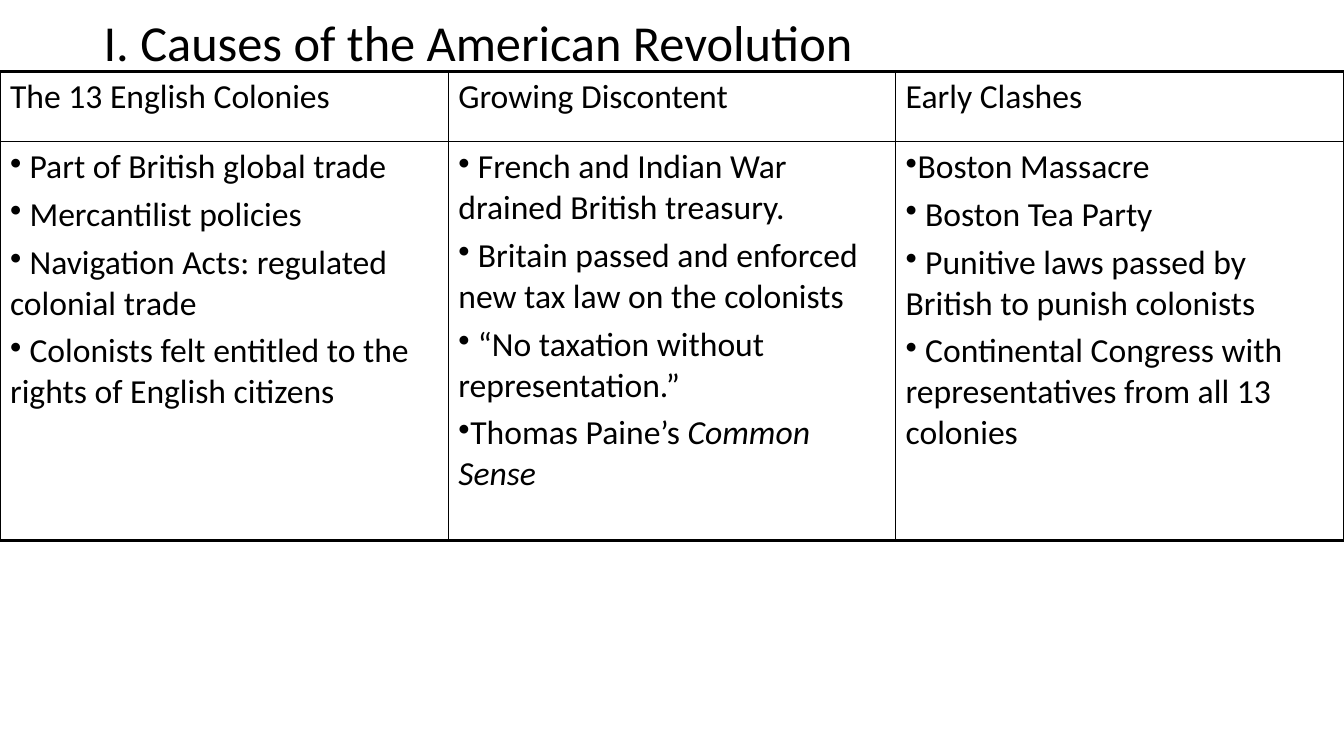
from dataclasses import dataclass

import lxml.etree
import pptx
import pptx.dml.color
import pptx.enum.text
import pptx.oxml.ns
import pptx.util

PX = 9525  # EMU in one px, 96 px to the inch
COLORS = {"ink": "000000", "paper": "FFFFFF"}
TITLE_FONT = {"name": "Calibri", "size": pptx.util.Pt(36), "bold": False}
CELL_FONT = {"name": "Calibri", "size": pptx.util.Pt(24), "bold": False}
THIN, THICK = 1, 2.25  # border widths in points
SLIDE_WIDTH, SLIDE_HEIGHT = 1280, 720
TABLE_TOP = 68
COLUMN_WIDTHS = (427, 426, 427)
ROW_HEIGHTS = (67, 380)


@dataclass
class Point:
    text: str
    book_title: str = ""


@dataclass
class Topic:
    heading: str
    points: list[Point]


TOPICS = [
    Topic("The 13 English Colonies", [
        Point(" Part of British global trade"),
        Point(" Mercantilist policies"),
        Point(" Navigation Acts: regulated colonial trade"),
        Point(" Colonists felt entitled to the rights of English citizens"),
    ]),
    Topic("Growing Discontent", [
        Point(" French and Indian War drained British treasury."),
        Point(" Britain passed and enforced new tax law on the colonists"),
        Point(" “No taxation without representation.”"),
        Point("Thomas Paine’s ", "Common Sense"),
    ]),
    Topic("Early Clashes", [
        Point("Boston Massacre"),
        Point(" Boston Tea Party"),
        Point(" Punitive laws passed by British to punish colonists"),
        Point(" Continental Congress with representatives from all 13 colonies"),
    ]),
]


def px(length: int) -> pptx.util.Emu:
    return pptx.util.Emu(length * PX)


def rgb(color: str) -> pptx.dml.color.RGBColor:
    return pptx.dml.color.RGBColor.from_string(COLORS[color])


def add_element(parent, tag: str, **attributes: str):
    return lxml.etree.SubElement(parent, pptx.oxml.ns.qn(tag), attributes)


def add_text(paragraph, text: str, formats: dict, italic: bool = False) -> None:
    run = paragraph.add_run()
    run.text = text
    for name, value in {**formats, "italic": italic}.items():
        setattr(run.font, name, value)
    run.font.color.rgb = rgb("ink")


def add_points(frame, points: list[Point]) -> None:
    for index, point in enumerate(points):
        paragraph = frame.add_paragraph() if index else frame.paragraphs[0]
        properties = paragraph._p.get_or_add_pPr()
        properties.set("marL", "0")
        properties.set("indent", "0")
        add_element(properties, "a:buChar", char="•")
        if index:
            paragraph.space_before = pptx.util.Pt(4.8)
        add_text(paragraph, point.text, CELL_FONT)
        if point.book_title:
            add_text(paragraph, point.book_title, CELL_FONT, italic=True)


def draw_borders(cell, outer_edges: dict[str, bool]) -> None:
    properties = cell._tc.get_or_add_tcPr()
    for edge, outer in outer_edges.items():
        width = pptx.util.Pt(THICK if outer else THIN)
        line = add_element(properties, f"a:ln{edge}", w=str(width))
        fill = add_element(line, "a:solidFill")
        add_element(fill, "a:srgbClr", val=COLORS["ink"])
    cell.fill.background()


def add_title(slide) -> None:
    title = slide.shapes.title
    geometry = {"left": 89, "top": 0, "width": 1104, "height": 139}
    for name, value in geometry.items():
        setattr(title, name, px(value))
    # The deep bottom margin lifts the heading above the table
    frame_formats = {
        "word_wrap": True,
        "auto_size": pptx.enum.text.MSO_AUTO_SIZE.NONE,
        "vertical_anchor": pptx.enum.text.MSO_ANCHOR.MIDDLE,
        "margin_bottom": px(58),
    }
    for name, value in frame_formats.items():
        setattr(title.text_frame, name, value)
    heading = title.text_frame.paragraphs[0]
    heading.alignment = pptx.enum.text.PP_ALIGN.LEFT
    heading.line_spacing = 0.9
    add_text(heading, "I. Causes of the American Revolution", TITLE_FONT)


def add_causes_table(slide, topics: list[Topic]) -> None:
    causes = slide.shapes.add_table(
        len(ROW_HEIGHTS), len(topics), px(0), px(TABLE_TOP),
        px(sum(COLUMN_WIDTHS)), px(sum(ROW_HEIGHTS))).table
    causes.first_row = False
    causes.horz_banding = False
    for column, width in zip(causes.columns, COLUMN_WIDTHS):
        column.width = px(width)
    for row, height in zip(causes.rows, ROW_HEIGHTS):
        row.height = px(height)

    for index, topic in enumerate(topics):
        heading_cell, points_cell = causes.cell(0, index), causes.cell(1, index)
        add_text(heading_cell.text_frame.paragraphs[0], topic.heading, CELL_FONT)
        add_points(points_cell.text_frame, topic.points)
        for cell in (heading_cell, points_cell):
            draw_borders(cell, {
                "L": index == 0,
                "R": index == len(topics) - 1,
                "T": cell is heading_cell,
                "B": cell is points_cell,
            })


def main() -> None:
    presentation = pptx.Presentation()
    presentation.slide_width = px(SLIDE_WIDTH)
    presentation.slide_height = px(SLIDE_HEIGHT)
    title_only = presentation.slide_layouts[5]
    slide = presentation.slides.add_slide(title_only)

    # Background
    slide.background.fill.solid()
    slide.background.fill.fore_color.rgb = rgb("paper")

    # Heading and table of causes
    add_title(slide)
    add_causes_table(slide, TOPICS)
    presentation.save("out.pptx")


if __name__ == "__main__":
    main()
